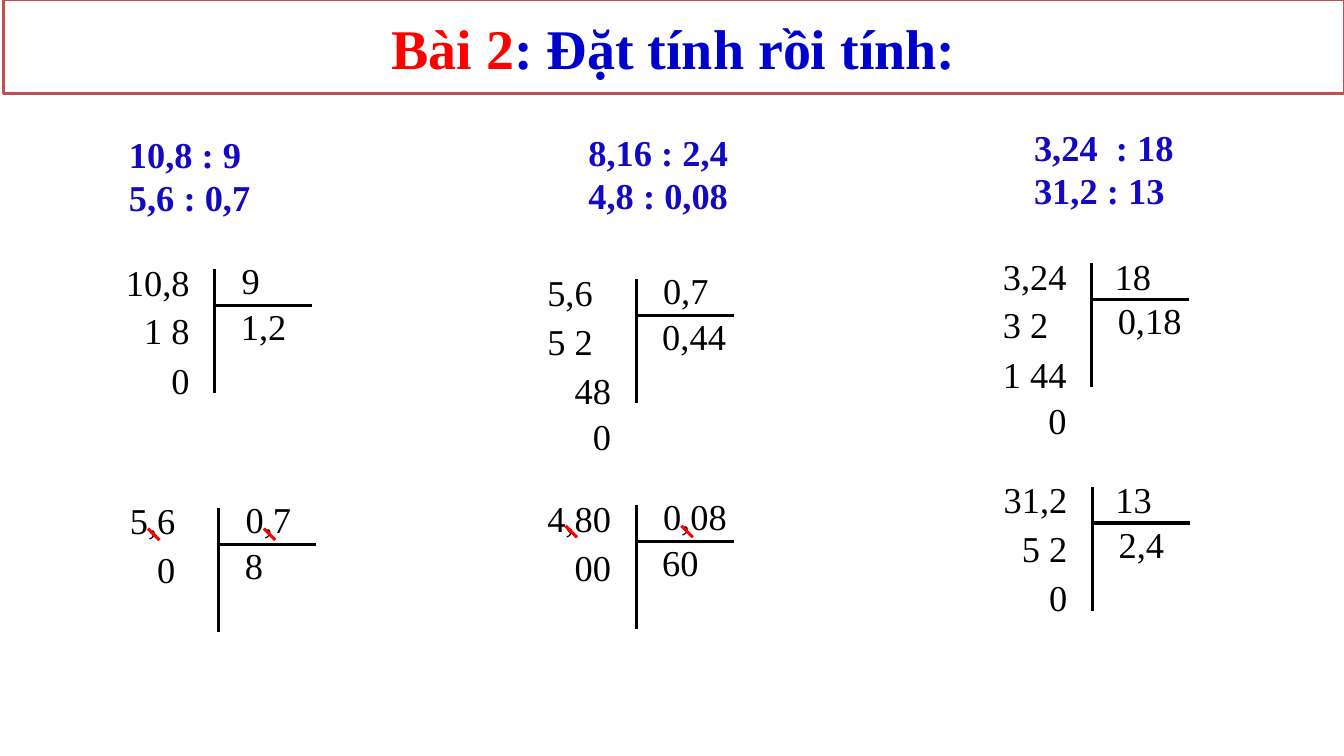
from collections import namedtuple

from lxml import etree
from pptx import Presentation
from pptx.dml.color import RGBColor
from pptx.enum.shapes import MSO_CONNECTOR, MSO_SHAPE
from pptx.enum.text import MSO_ANCHOR, PP_ALIGN
from pptx.oxml.ns import qn
from pptx.util import Cm, Pt

Theme = namedtuple("Theme", "font title body frame white red title_blue task_blue black")
theme = Theme(
    font="Times New Roman",
    title=Pt(40),
    body=Pt(26),
    frame=RGBColor(0xC0, 0x50, 0x4D),
    white=RGBColor(0xFF, 0xFF, 0xFF),
    red=RGBColor(0xFF, 0, 0),
    title_blue=RGBColor(0, 0, 0xCC),
    task_blue=RGBColor(0x14, 0x09, 0xC3),
    black=RGBColor(0, 0, 0),
)

presentation = Presentation()
presentation.slide_width, presentation.slide_height = Cm(33.87), Cm(19.05)
slide = presentation.slides.add_slide(presentation.slide_layouts[6])


def add_text(text, left, top, width=2.87, height=1.37, color=theme.black,
             size=theme.body, bold=False, align=PP_ALIGN.LEFT):
    """Add a text box in centimetres; each line of text becomes a paragraph."""
    shape = slide.shapes.add_textbox(Cm(left), Cm(top), Cm(width), Cm(height))
    frame = shape.text_frame
    frame.word_wrap = True
    frame.text = text
    for paragraph in frame.paragraphs:
        paragraph.alignment = align
        for run in paragraph.runs:
            run.font.name, run.font.size = theme.font, size
            run.font.bold, run.font.color.rgb = bold, color
    return shape


def add_line(left, top, width, height, color=theme.black):
    line = slide.shapes.add_connector(
        MSO_CONNECTOR.STRAIGHT, Cm(left), Cm(top), Cm(left + width), Cm(top + height))
    line.line.color.rgb, line.line.width = color, Pt(2.25)
    etree.SubElement(line._element.spPr, qn("a:effectLst"))


# Title banner
banner = slide.shapes.add_shape(MSO_SHAPE.RECTANGLE, Cm(0.08), 0, Cm(33.79), Cm(2.36))
banner.shadow.inherit = False
banner.fill.solid()
banner.fill.fore_color.rgb = theme.white
banner.line.color.rgb, banner.line.width = theme.frame, Pt(2)
banner.text_frame.vertical_anchor = MSO_ANCHOR.MIDDLE
title = banner.text_frame.paragraphs[0]
title.alignment = PP_ALIGN.CENTER
for text, color in (("Bài 2", theme.red), (": Đặt tính rồi tính:", theme.title_blue)):
    run = title.add_run()
    run.text = text
    run.font.name, run.font.size = theme.font, theme.title
    run.font.bold, run.font.color.rgb = True, color

# Tasks
for text, left, top in (
    ("10,8 : 9\n5,6 : 0,7", 3, 3.2),
    ("8,16 : 2,4\n4,8 : 0,08", 14.58, 3.15),
    ("3,24  : 18\n31,2 : 13", 25.81, 3.02),
):
    add_text(text, left, top, width=4.5, height=2.49, color=theme.task_blue, bold=True)

# Long divisions: each working row carries its shift to the left, in digits
Division = namedtuple("Division", "bar top divisor quotient rows divisor_at struck")
NEAR, FAR = (0.33, -0.36), (0.43, -0.41)
divisions = (
    Division(5.41, 6.78, "9", "1,2", (("10,8", 0), ("1 8", 0), ("0", 0)), FAR, False),
    Division(16.03, 7.04, "0,7", "0,44",
             (("5,6", 1), ("5 2", 1), ("48", 0), ("0", 0)), FAR, False),
    Division(27.51, 6.63, "18", "0,18",
             (("3,24", 0), ("3 2", 1), ("1 44", 0), ("0", 0)), NEAR, False),
    Division(27.53, 12.27, "13", "2,4", (("31,2", 0), ("5 2", 0), ("0", 0)), NEAR, False),
    Division(5.51, 12.8, "0,7", "8", (("5,6", 1), ("0", 1)), FAR, True),
    Division(16.03, 12.73, "0,08", "60", (("4,80", 0), ("00", 0)), FAR, True),
)
ROW_TOPS = (-0.36, 0.87, 2.11, 3.28)
BOX_WIDTH, DIGIT_WIDTH, BAR_GAP = 2.87, 0.46, 0.38

for division in divisions:
    bar, top = division.bar, division.top
    for (text, shift), row_top in zip(division.rows, ROW_TOPS):
        left = bar - BAR_GAP - BOX_WIDTH - shift * DIGIT_WIDTH
        add_text(text, left, top + row_top, width=BOX_WIDTH, align=PP_ALIGN.RIGHT)
    divisor_left, divisor_top = division.divisor_at
    add_text(division.divisor, bar + divisor_left, top + divisor_top)
    add_text(division.quotient, bar + 0.41, top + 0.76)
    add_line(bar, top, 0, 3.12)
    add_line(bar, top + 0.91, 2.46, 0)
    if division.struck:
        for comma in (1.14, -1.78):
            add_line(bar + comma, top + 0.52, 0.29, 0.29, color=theme.red)

presentation.save("out.pptx")
